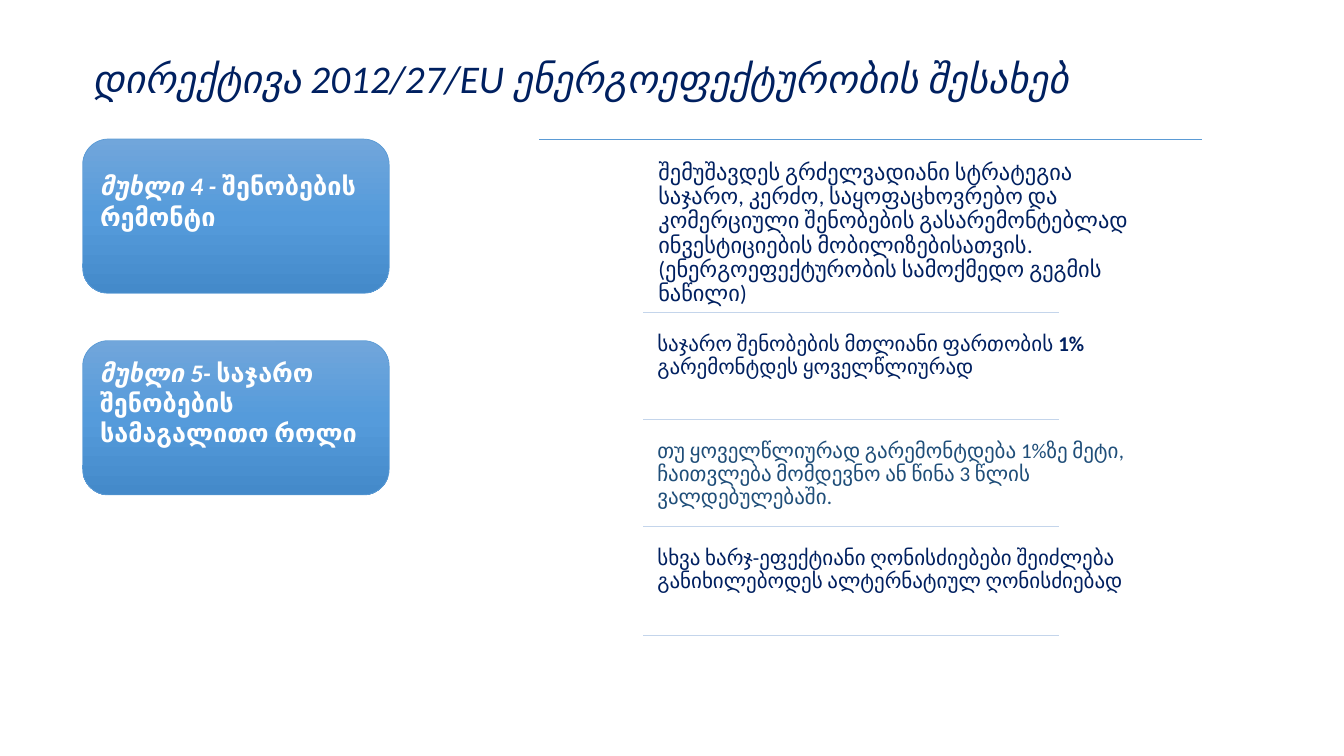
from copy import deepcopy
from dataclasses import dataclass
from itertools import pairwise

from lxml.etree import SubElement
from pptx import Presentation
from pptx.dml.color import RGBColor
from pptx.enum.shapes import MSO_CONNECTOR, MSO_SHAPE
from pptx.enum.text import MSO_ANCHOR, PP_ALIGN
from pptx.oxml.ns import qn
from pptx.util import Inches, Pt


@dataclass(frozen=True)
class Theme:
    font: str = "Calibri"
    navy: str = "002060"
    steel: str = "1F4E79"
    white: str = "FFFFFF"
    accent: str = "5B9BD5"
    pale: str = "C4D5EB"
    card_gradient: tuple = ("71A6DB", "559BDB", "448ACA")
    title_size: int = 28
    card_size: int = 18
    lead_size: int = 16
    body_size: int = 15
    line_width: float = 0.5


THEME = Theme()

CARD_LEFT, CARD_WIDTH, CARD_HEIGHT = 0.82, 3.04, 1.53
CARD_TOP, CARD_PITCH = 1.38, 2
CARDS = [
    ("მუხლი 4 - ", "შენობების რემონტი"),
    ("მუხლი 5- ", "საჯარო შენობების სამაგალითო როლი"),
]

RULE_TOPS = [1.38, 3.1, 4.16, 5.22, 6.3]
RULE_LEFT, RULE_RIGHT = 6.38, 10.5
TEXT_LEFT, TEXT_GAP = 6.46, 0.15

# Each requirement: width, inset, size, colour, runs of (text, bold)
REQUIREMENTS = [
    (5.09, 0.07, THEME.lead_size, THEME.navy, [
        ("შემუშავდეს გრძელვადიანი სტრატეგია საჯარო, კერძო, საყოფაცხოვრებო და "
         "კომერციული შენობების გასარემონტებლად ინვესტიციების "
         "მობილიზებისათვის.(ენერგოეფექტურობის სამოქმედო გეგმის ნაწილი)", False)]),
    (5.14, 0.06, THEME.body_size, THEME.navy, [
        ("საჯარო შენობების მთლიანი ფართობის ", False),
        ("1%", True),
        (" გარემონტდეს ყოველწლიურად", False)]),
    (5.2, 0.06, THEME.body_size, THEME.steel, [
        ("თუ ყოველწლიურად გარემონტდება 1%ზე მეტი, ჩაითვლება მომდევნო ან წინა "
         "3 წლის ვალდებულებაში.", False)]),
    (5.45, 0.06, THEME.body_size, THEME.navy, [
        ("სხვა ხარჯ-ეფექტიანი ღონისძიებები შეიძლება განიხილებოდეს "
         "ალტერნატიულ ღონისძიებად", False)]),
]


def add_run(paragraph, text, size, color, bold=False, italic=False):
    run = paragraph.add_run()
    run.text = text
    run.font.name = THEME.font
    run.font.size = Pt(size)
    run.font.bold = bold
    run.font.italic = italic
    run.font.color.rgb = RGBColor.from_string(color)


def add_text_box(slide, left, top, width, height):
    """Add a wrapping text box and return its text frame."""
    box = slide.shapes.add_textbox(
        Inches(left), Inches(top), Inches(width), Inches(height))
    frame = box.text_frame
    frame.word_wrap = True
    frame.paragraphs[0].line_spacing = 0.9
    return frame


def add_title(slide, text):
    frame = add_text_box(slide, 0.82, 0.4, 11.94, 0.8)
    frame.vertical_anchor = MSO_ANCHOR.MIDDLE
    add_run(frame.paragraphs[0], text, THEME.title_size, THEME.navy, italic=True)


def add_rule(slide, left, right, top, color):
    rule = slide.shapes.add_connector(
        MSO_CONNECTOR.STRAIGHT,
        Inches(left), Inches(top), Inches(right), Inches(top))
    rule.line.color.rgb = RGBColor.from_string(color)
    rule.line.width = Pt(THEME.line_width)
    SubElement(rule._element.spPr, qn("a:effectLst"))


def fill_with_gradient(shape, colors):
    """Fill from top to bottom with three evenly spaced colours."""
    shape.fill.gradient()
    shape.fill.gradient_angle = 270
    first_stop = shape._element.spPr.find(".//" + qn("a:gs"))
    first_stop.addnext(deepcopy(first_stop))
    for index, (stop, color) in enumerate(zip(shape.fill.gradient_stops, colors)):
        stop.position = index / (len(colors) - 1)
        stop.color.rgb = RGBColor.from_string(color)


def add_card(slide, top, article, subject):
    card = slide.shapes.add_shape(
        MSO_SHAPE.ROUNDED_RECTANGLE, Inches(CARD_LEFT), Inches(top),
        Inches(CARD_WIDTH), Inches(CARD_HEIGHT))
    card.shadow.inherit = False
    fill_with_gradient(card, THEME.card_gradient)
    card.line.color.rgb = RGBColor.from_string(THEME.accent)
    card.line.width = Pt(THEME.line_width)
    frame = card.text_frame
    frame.word_wrap = True
    frame.vertical_anchor = MSO_ANCHOR.MIDDLE
    frame.margin_bottom = Inches(0.35)
    paragraph = frame.paragraphs[0]
    paragraph.alignment = PP_ALIGN.LEFT
    add_run(paragraph, article, THEME.card_size, THEME.white, bold=True, italic=True)
    add_run(paragraph, subject, THEME.card_size, THEME.white, bold=True)


def add_requirement(slide, top, bottom, requirement):
    """Add one text between two rules, and the rule below it."""
    width, inset, size, color, runs = requirement
    text_top = top + TEXT_GAP
    frame = add_text_box(slide, TEXT_LEFT, text_top, width, bottom - text_top)
    frame.margin_left = frame.margin_right = Inches(inset)
    frame.margin_top = frame.margin_bottom = Inches(inset)
    for text, bold in runs:
        add_run(frame.paragraphs[0], text, size, color, bold=bold)
    add_rule(slide, RULE_LEFT, RULE_RIGHT, bottom, THEME.pale)


def main():
    presentation = Presentation()
    presentation.slide_width = Inches(13.33)
    presentation.slide_height = Inches(7.5)
    slide = presentation.slides.add_slide(presentation.slide_layouts[6])

    add_title(slide, "დირექტივა 2012/27/EU ენერგოეფექტურობის შესახებ")
    for index, (article, subject) in enumerate(CARDS):
        add_card(slide, CARD_TOP + index * CARD_PITCH, article, subject)
    add_rule(slide, 5.35, 11.92, RULE_TOPS[0], THEME.accent)
    for (top, bottom), requirement in zip(pairwise(RULE_TOPS), REQUIREMENTS):
        add_requirement(slide, top, bottom, requirement)

    presentation.save("out.pptx")


if __name__ == "__main__":
    main()
